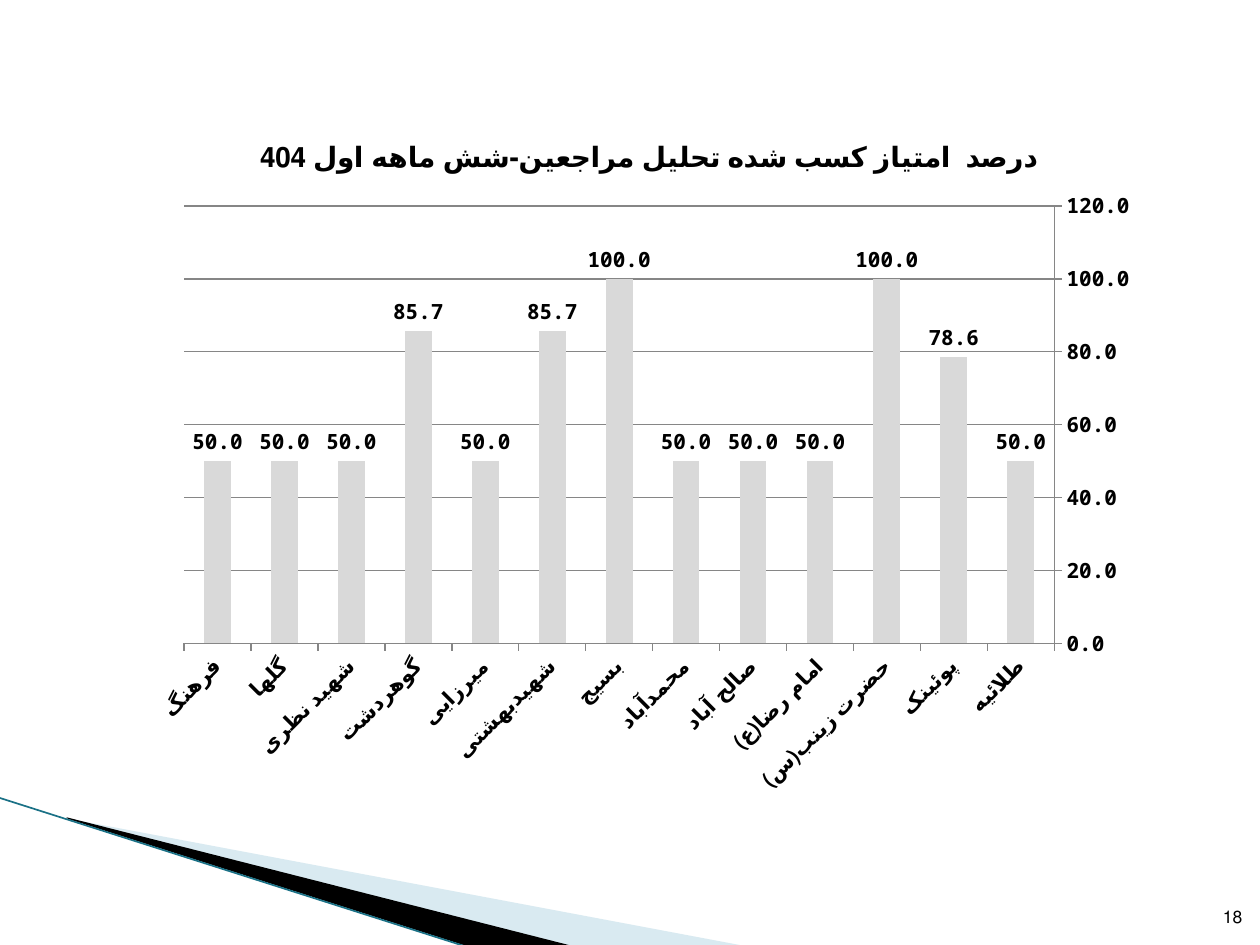
from dataclasses import dataclass
from typing import Any

from lxml.etree import SubElement
from pptx import Presentation
from pptx.chart.chart import Chart
from pptx.chart.data import CategoryChartData
from pptx.dml.color import RGBColor
from pptx.enum.chart import XL_CHART_TYPE, XL_LABEL_POSITION, XL_TICK_MARK
from pptx.enum.shapes import MSO_CONNECTOR
from pptx.enum.text import MSO_ANCHOR, PP_ALIGN
from pptx.oxml import parse_xml
from pptx.oxml.ns import nsdecls, qn
from pptx.slide import Slide
from pptx.util import Pt


@dataclass(frozen=True)
class Theme:
    font: str = "Noto Sans Mono"
    text: RGBColor = RGBColor(0x00, 0x00, 0x00)
    bar: RGBColor = RGBColor(0xD9, 0xD9, 0xD9)
    grid: RGBColor = RGBColor(0x86, 0x86, 0x86)
    pale: RGBColor = RGBColor(0xA0, 0xCB, 0xDC)
    edge: RGBColor = RGBColor(0x1A, 0x71, 0x86)
    title_size: float = 16
    label_size: float = 12
    number_size: float = 10


@dataclass(frozen=True)
class Wedge:
    corners: tuple[tuple[float, float], ...]
    color: RGBColor
    opacity: int = 100


@dataclass(frozen=True)
class Centre:
    name: str
    percent: float


THEME = Theme()

WEDGES = (
    Wedge(((39.6, 468.5), (428.4, 540.7), (328.3, 540.7), (39.6, 468)), THEME.pale, 40),
    Wedge(((38.2, 467.3), (329, 540.7), (267.8, 541.4), (38.9, 468)), THEME.text),
)

CENTRES = (
    Centre("طلائیه", 50),
    Centre("پوئینک", 78.6),
    Centre("حضرت زینب(س)", 100),
    Centre("امام رضا(ع)", 50),
    Centre("صالح آباد", 50),
    Centre("محمدآباد", 50),
    Centre("بسیج", 100),
    Centre("شهیدبهشتی", 85.7),
    Centre("میرزایی", 50),
    Centre("گوهردشت", 85.7),
    Centre("شهید نظری", 50),
    Centre("گلها", 50),
    Centre("فرهنگ", 50),
)

PLOT_FRACTIONS = {"x": 0.04, "y": 0.13, "w": 0.86, "h": 0.63}


def apply_format(target: Any, values: dict[str, Any]) -> None:
    for attribute, value in values.items():
        setattr(target, attribute, value)


def format_font(font: Any, size: float, bold: bool) -> None:
    apply_format(font, {"name": THEME.font, "size": Pt(size), "bold": bold})
    font.color.rgb = THEME.text


def draw_wedge(slide: Slide, wedge: Wedge) -> None:
    builder = slide.shapes.build_freeform(*wedge.corners[0], scale=Pt(1))
    builder.add_line_segments(wedge.corners[1:])
    outline = builder.convert_to_shape()
    outline.shadow.inherit = False
    outline.line.fill.background()
    outline.fill.solid()
    outline.fill.fore_color.rgb = wedge.color
    if wedge.opacity < 100:
        color = outline.element.spPr.find(f".//{qn('a:srgbClr')}")
        SubElement(color, qn("a:alpha"), val=str(wedge.opacity * 1000))


def draw_edge(slide: Slide) -> None:
    edge = slide.shapes.add_connector(
        MSO_CONNECTOR.STRAIGHT, Pt(-0.7), Pt(455.8), Pt(267.8), Pt(541.4)
    )
    edge.line.width = Pt(0.95)
    edge.line.color.rgb = THEME.edge
    SubElement(edge.element.spPr, qn("a:effectLst"))


def draw_slide_number(slide: Slide, number: str) -> None:
    frame = slide.shapes.add_textbox(Pt(681.1), Pt(504.7), Pt(28.8), Pt(28.8)).text_frame
    apply_format(frame, {
        "word_wrap": True,
        "vertical_anchor": MSO_ANCHOR.BOTTOM,
        "margin_left": 0,
        "margin_right": 0,
    })
    paragraph = frame.paragraphs[0]
    paragraph.alignment = PP_ALIGN.RIGHT
    paragraph._p.get_or_add_pPr().set("rtl", "1")
    run = paragraph.add_run()
    run.text = number
    format_font(run.font, THEME.number_size, False)


def place_plot(chart: Chart) -> None:
    plot_area = chart._chartSpace.chart.plotArea
    for automatic in plot_area.findall(qn("c:layout")):
        plot_area.remove(automatic)
    modes = '<c:layoutTarget val="inner"/><c:xMode val="edge"/><c:yMode val="edge"/>'
    sizes = "".join(f'<c:{side} val="{part}"/>' for side, part in PLOT_FRACTIONS.items())
    plot_area.insert(0, parse_xml(
        f"<c:layout {nsdecls('c')}><c:manualLayout>{modes}{sizes}</c:manualLayout></c:layout>"
    ))


def format_axes(chart: Chart) -> None:
    centre_axis, percent_axis = chart.category_axis, chart.value_axis
    for axis in (centre_axis, percent_axis):
        apply_format(axis, {
            "major_tick_mark": XL_TICK_MARK.OUTSIDE,
            "minor_tick_mark": XL_TICK_MARK.NONE,
        })
        axis.format.line.color.rgb = THEME.grid
        format_font(axis.tick_labels.font, THEME.label_size, True)
    apply_format(centre_axis, {"reverse_order": True, "has_major_gridlines": False})
    centre_axis._element.find(f".//{qn('a:bodyPr')}").set("rot", "-2700000")
    apply_format(percent_axis, {
        "minimum_scale": 0,
        "maximum_scale": 120,
        "major_unit": 20,
        "has_major_gridlines": True,
    })
    percent_axis.major_gridlines.format.line.color.rgb = THEME.grid
    apply_format(percent_axis.tick_labels, {
        "number_format": "0.0",
        "number_format_is_linked": False,
    })


def draw_chart(slide: Slide, title: str) -> None:
    scores = CategoryChartData(number_format="0.0")
    scores.categories = [centre.name for centre in CENTRES]
    scores.add_series("Series 1", [centre.percent for centre in CENTRES])
    chart = slide.shapes.add_chart(
        XL_CHART_TYPE.COLUMN_CLUSTERED, Pt(82.1), Pt(66.2), Pt(578.2), Pt(396.7), scores
    ).chart
    apply_format(chart, {"has_legend": False, "has_title": True})
    format_font(chart.font, 18, False)

    heading = chart.chart_title.text_frame.paragraphs[0]
    heading._p.get_or_add_pPr().set("rtl", "1")
    run = heading.add_run()
    run.text = title
    format_font(run.font, THEME.title_size, True)

    plot = chart.plots[0]
    apply_format(plot, {"gap_width": 150, "vary_by_categories": False, "has_data_labels": True})
    apply_format(plot.data_labels, {
        "show_value": True,
        "number_format": "0.0",
        "number_format_is_linked": False,
        "position": XL_LABEL_POSITION.OUTSIDE_END,
    })
    format_font(plot.data_labels.font, THEME.label_size, True)
    bars = plot.series[0]
    bars.format.fill.solid()
    bars.format.fill.fore_color.rgb = THEME.bar
    format_axes(chart)
    place_plot(chart)


def main() -> None:
    presentation = Presentation()
    apply_format(presentation, {"slide_width": Pt(720), "slide_height": Pt(540)})
    slide = presentation.slides.add_slide(presentation.slide_layouts[6])
    for wedge in WEDGES:
        draw_wedge(slide, wedge)
    draw_edge(slide)
    draw_slide_number(slide, "18")
    draw_chart(slide, "درصد  امتیاز کسب شده تحلیل مراجعین-شش ماهه اول 404")
    presentation.save("out.pptx")


if __name__ == "__main__":
    main()
